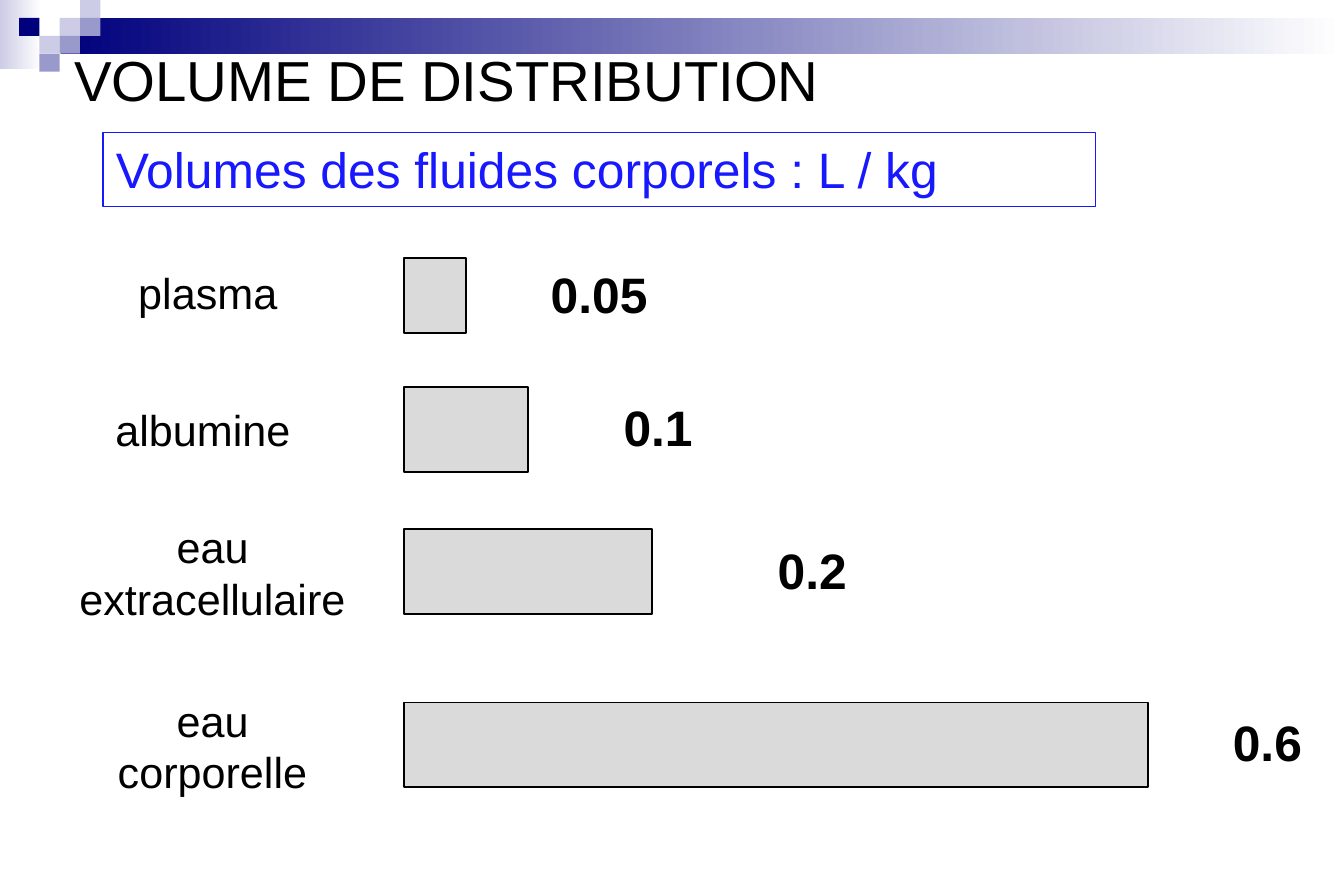
from pptx import Presentation
from pptx.dml.color import RGBColor
from pptx.enum.shapes import MSO_SHAPE
from pptx.enum.text import MSO_ANCHOR, MSO_AUTO_SIZE, PP_ALIGN
from pptx.util import Inches, Pt

NAVY = RGBColor(0x00, 0x00, 0x7D)
LAVENDER = RGBColor(0xCC, 0xCC, 0xE6)
PERIWINKLE = RGBColor(0x99, 0x99, 0xCC)
BLUE = RGBColor(0x18, 0x18, 0xFF)
GREY = RGBColor(0xDA, 0xDA, 0xDA)
BLACK = RGBColor(0x00, 0x00, 0x00)
WHITE = RGBColor(0xFF, 0xFF, 0xFF)

WIDTH, HEIGHT = 11.25, 7.5
COLUMN, ROW = 0.17, 0.15
BAR_LEFT, INCHES_PER_UNIT = 3.38, 10.38


def write(frame, text, size=30, color=BLACK, bold=False,
          align=PP_ALIGN.LEFT, anchor=MSO_ANCHOR.TOP, inset=0.11):
    frame.word_wrap = True
    frame.auto_size = MSO_AUTO_SIZE.NONE
    frame.vertical_anchor = anchor
    frame.margin_left, frame.margin_right = Inches(inset), 0
    frame.margin_top = frame.margin_bottom = Inches(0.05)
    frame.text = text
    for paragraph in frame.paragraphs:
        paragraph.alignment = align
        font = paragraph.font
        font.name, font.size, font.bold = "Arial", Pt(size), bold
        font.color.rgb = color


def add_box(left, top, width, height, fill=None, line=None, fade=False):
    box = slide.shapes.add_shape(
        MSO_SHAPE.RECTANGLE, Inches(left), Inches(top), Inches(width), Inches(height))
    box.shadow.inherit = False
    if fade:
        box.fill.gradient()
        box.fill.gradient_angle = 0
        for stop, color in zip(box.fill.gradient_stops, (fill, WHITE)):
            stop.color.rgb = color
    elif fill is None:
        box.fill.background()
    else:
        box.fill.solid()
        box.fill.fore_color.rgb = fill
    if line is None:
        box.line.fill.background()
    else:
        box.line.color.rgb = line
        box.line.width = Pt(1)
    return box


presentation = Presentation()
presentation.slide_width = Inches(WIDTH)
presentation.slide_height = Inches(HEIGHT)
slide = presentation.slides.add_slide(presentation.slide_layouts[5])

add_box(0, 0, 0.35, 0.58, fill=LAVENDER, fade=True)
add_box(0.51, ROW, WIDTH - 0.51, 2 * ROW, fill=NAVY, fade=True)

mosaic = [
    (2, 1, LAVENDER), (3, 0, LAVENDER), (3, 1, PERIWINKLE), (1, 2, LAVENDER),
    (0, 1, NAVY), (2, 2, PERIWINKLE), (1, 3, PERIWINKLE),
]
for column, row, color in mosaic:
    add_box(0.16 + column * COLUMN, row * ROW, COLUMN, ROW, fill=color)

title = slide.shapes.title
title.left, title.top = Inches(0.51), Inches(0.33)
title.width, title.height = Inches(8.39), Inches(0.67)
write(title.text_frame, "VOLUME DE DISTRIBUTION", size=34, anchor=MSO_ANCHOR.MIDDLE)

heading = add_box(0.86, 1.11, 8.31, 0.62, line=BLUE)
write(heading.text_frame, "Volumes des fluides corporels : L / kg", color=BLUE)

fluids = [
    ("plasma", 0.05, 2.16, 0.63, 1.74, 2.18, 4.5, 2.16),
    ("albumine", 0.1, 3.24, 0.71, 1.7, 3.33, 5.11, 3.27),
    ("eau\nextracellulaire", 0.2, 4.43, 0.71, 1.78, 4.31, 6.4, 4.47),
    ("eau\ncorporelle", 0.6, 5.88, 0.71, 1.78, 5.76, 10.21, 5.91),
]
for fluid, volume, top, height, center, label_top, volume_left, volume_top in fluids:
    add_box(BAR_LEFT, top, volume * INCHES_PER_UNIT, height, fill=GREY, line=BLACK)
    label = slide.shapes.add_textbox(
        Inches(center - 1.2), Inches(label_top), Inches(2.4),
        Inches(0.53 + 0.44 * fluid.count("\n")))
    write(label.text_frame, fluid, size=26, align=PP_ALIGN.CENTER, inset=0)
    amount = slide.shapes.add_textbox(
        Inches(volume_left), Inches(volume_top), Inches(1.04), Inches(0.61))
    write(amount.text_frame, str(volume), bold=True)

presentation.save("out.pptx")
